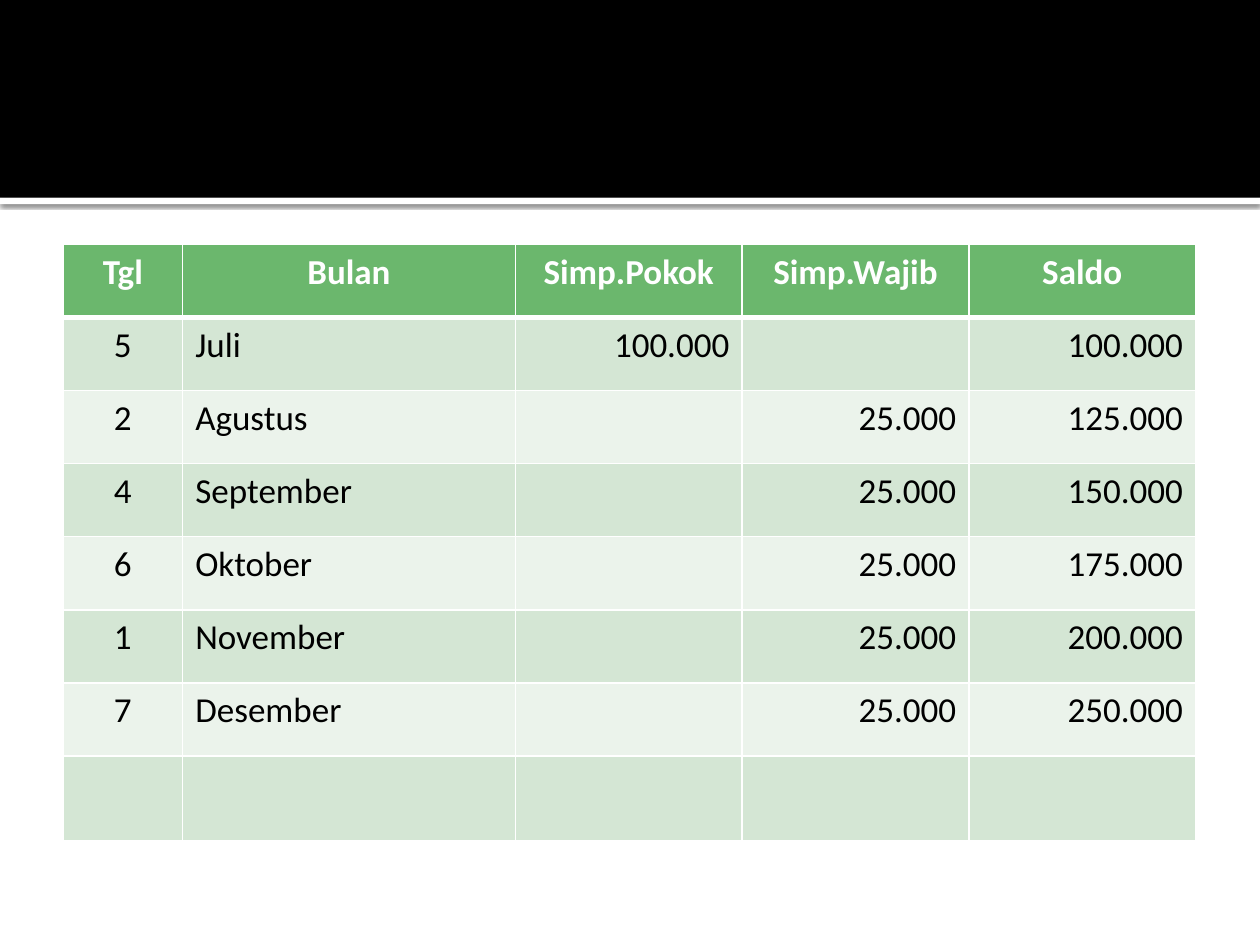
from lxml import etree
from pptx import Presentation
from pptx.dml.color import RGBColor
from pptx.enum.shapes import MSO_SHAPE
from pptx.enum.text import PP_ALIGN
from pptx.oxml.ns import qn
from pptx.util import Inches, Pt

RECTANGLE = MSO_SHAPE.RECTANGLE
LEFT, CENTER, RIGHT = PP_ALIGN.LEFT, PP_ALIGN.CENTER, PP_ALIGN.RIGHT
COLORS = {
    "white": "FFFFFF",
    "black": "000000",
    "header": "6BB76D",
    "odd": "D4E6D4",
    "even": "EBF3EB",
}


def write_text(cell, text, color="black", bold=False, align=LEFT):
    para = cell.text_frame.paragraphs[0]
    para.alignment = align
    para.font.size = Pt(20)
    if text:
        span = para.add_run()
        span.text = text
        span.font.name = "Calibri"
        span.font.size = Pt(20)
        span.font.bold = bold
        span.font.color.rgb = RGBColor.from_string(COLORS[color])


def add_border(cell, side, width):
    line = etree.SubElement(cell._tc.get_or_add_tcPr(), qn(f"a:ln{side}"), w=str(Pt(width)))
    fill = etree.SubElement(line, qn("a:solidFill"))
    etree.SubElement(fill, qn("a:srgbClr"), val=COLORS["white"])


deck = Presentation()
deck.slide_width = Inches(10)
deck.slide_height = Inches(7.5)
page = deck.slides.add_slide(deck.slide_layouts[6])

bands = []
for top, height, color in [(1.57, 0.05, "white"), (0, 1.57, "black")]:
    band = page.shapes.add_shape(RECTANGLE, 0, Inches(top), Inches(10), Inches(height))
    band.fill.solid()
    band.fill.fore_color.rgb = RGBColor.from_string(COLORS[color])
    band.line.fill.background()
    band.shadow.inherit = False
    bands.append(band)

effects = bands[0]._element.spPr.find(qn("a:effectLst"))
shadow = etree.SubElement(
    effects, qn("a:outerShdw"), blurRad=str(Pt(2.5)), dist=str(Pt(0.8)),
    dir="5400000", algn="tl", rotWithShape="0",
)
shadow_color = etree.SubElement(shadow, qn("a:srgbClr"), val=COLORS["black"])
etree.SubElement(shadow_color, qn("a:alpha"), val="60000")

rows = [
    ("Tgl", "Bulan", "Simp.Pokok", "Simp.Wajib", "Saldo"),
    ("5", "Juli", "100.000", "", "100.000"),
    ("2", "Agustus", "", "25.000", "125.000"),
    ("4", "September", "", "25.000", "150.000"),
    ("6", "Oktober", "", "25.000", "175.000"),
    ("1", "November", "", "25.000", "200.000"),
    ("7", "Desember", "", "25.000", "250.000"),
    ("", "", "", "", ""),
]
column_widths = [0.95, 2.64, 1.8, 1.8, 1.8]
row_heights = [0.58] * 7 + [0.67]
column_aligns = [CENTER, LEFT, RIGHT, RIGHT, RIGHT]

savings = page.shapes.add_table(
    len(rows), len(column_widths), Inches(0.5), Inches(1.94),
    Inches(sum(column_widths)), Inches(sum(row_heights)),
).table
for column, width in zip(savings.columns, column_widths):
    column.width = Inches(width)

for row_index, values in enumerate(rows):
    savings.rows[row_index].height = Inches(row_heights[row_index])
    is_header = row_index == 0
    fill_name = "header" if is_header else "odd" if row_index % 2 else "even"
    for column_index, value in enumerate(values):
        cell = savings.cell(row_index, column_index)
        for side in "LRTB":
            under_header = (row_index, side) in [(0, "B"), (1, "T")]
            add_border(cell, side, 3 if under_header else 1)
        cell.fill.solid()
        cell.fill.fore_color.rgb = RGBColor.from_string(COLORS[fill_name])
        if is_header:
            write_text(cell, value, color="white", bold=True, align=CENTER)
        else:
            write_text(cell, value, align=column_aligns[column_index])

deck.save("out.pptx")
